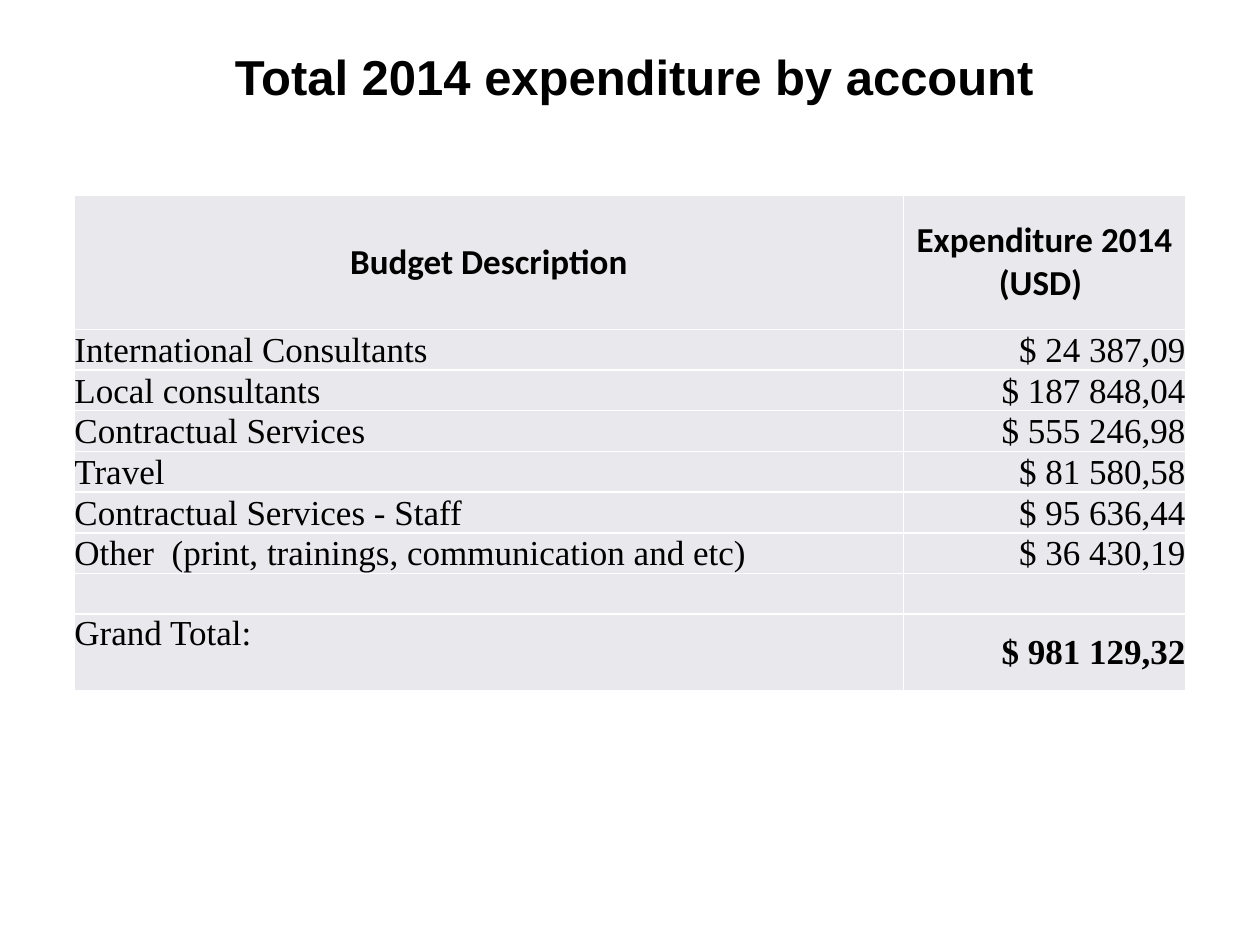
import pptx
import pptx.util
import pptx.dml.color
import pptx.enum.text
import pptx.oxml.ns
import lxml.etree

Cm = pptx.util.Cm
Pt = pptx.util.Pt
ALIGN = pptx.enum.text.PP_ALIGN
ANCHOR = pptx.enum.text.MSO_ANCHOR


def rgb(value):
    return pptx.dml.color.RGBColor.from_string(value)


def format_text(p, font, size, bold, align):
    p.alignment = align
    for r in p.runs:
        r.font.name = font
        r.font.size = Pt(size)
        r.font.bold = bold
        r.font.color.rgb = rgb("000000")


prs = pptx.Presentation()
prs.slide_width, prs.slide_height = Cm(25.4), Cm(19.05)
s = prs.slides.add_slide(prs.slide_layouts[5])

# Title
title = s.shapes.title
title.left, title.top, title.width, title.height = Cm(3.07), Cm(0.71), Cm(19.43), Cm(1.63)
tf = title.text_frame
tf.text = "Total 2014 expenditure by account"
tf.vertical_anchor = ANCHOR.MIDDLE
format_text(tf.paragraphs[0], "Arial", 28, True, ALIGN.CENTER)

# Expenditure table
rows = [
    ("Budget Description", "Expenditure 2014 (USD) "),
    ("International Consultants", "$ 24 387,09"),
    ("Local consultants", "$ 187 848,04"),
    ("Contractual Services", "$ 555 246,98"),
    ("Travel", "$ 81 580,58"),
    ("Contractual Services - Staff", "$ 95 636,44"),
    ("Other  (print, trainings, communication and etc)", "$ 36 430,19"),
    ("", ""),
    ("Grand Total:", "$ 981 129,32"),
]
last = len(rows) - 1
heights = [2.7] + [0.82] * (last - 1) + [1.55]
table = s.shapes.add_table(len(rows), 2, Cm(1.5), Cm(3.94), Cm(22.4), Cm(sum(heights))).table
table.columns[0].width, table.columns[1].width = Cm(16.71), Cm(5.69)

for i, texts in enumerate(rows):
    table.rows[i].height = Cm(heights[i])
    for j, text in enumerate(texts):
        cell = table.cell(i, j)
        cell.margin_left = cell.margin_right = cell.margin_top = cell.margin_bottom = 0
        header, total = i == 0, i == last

        # White cell borders, placed ahead of the fill
        tc_pr = cell._tc.get_or_add_tcPr()
        for side in ("a:lnL", "a:lnR", "a:lnT", "a:lnB"):
            ln = lxml.etree.SubElement(tc_pr, pptx.oxml.ns.qn(side), w=str(Pt(1)))
            fill = lxml.etree.SubElement(ln, pptx.oxml.ns.qn("a:solidFill"))
            lxml.etree.SubElement(fill, pptx.oxml.ns.qn("a:srgbClr"), val="FFFFFF")
        cell.fill.solid()
        cell.fill.fore_color.rgb = rgb("E9E9ED")

        # Cell text
        cell.text_frame.text = text
        if header or (total and j == 1):
            cell.vertical_anchor = ANCHOR.MIDDLE
        else:
            cell.vertical_anchor = ANCHOR.TOP if total else ANCHOR.BOTTOM
        align = ALIGN.CENTER if header else (ALIGN.LEFT, ALIGN.RIGHT)[j]
        font = "Calibri" if header else "Times New Roman"
        format_text(cell.text_frame.paragraphs[0], font, 20, header or (total and j == 1), align)

prs.save("out.pptx")
